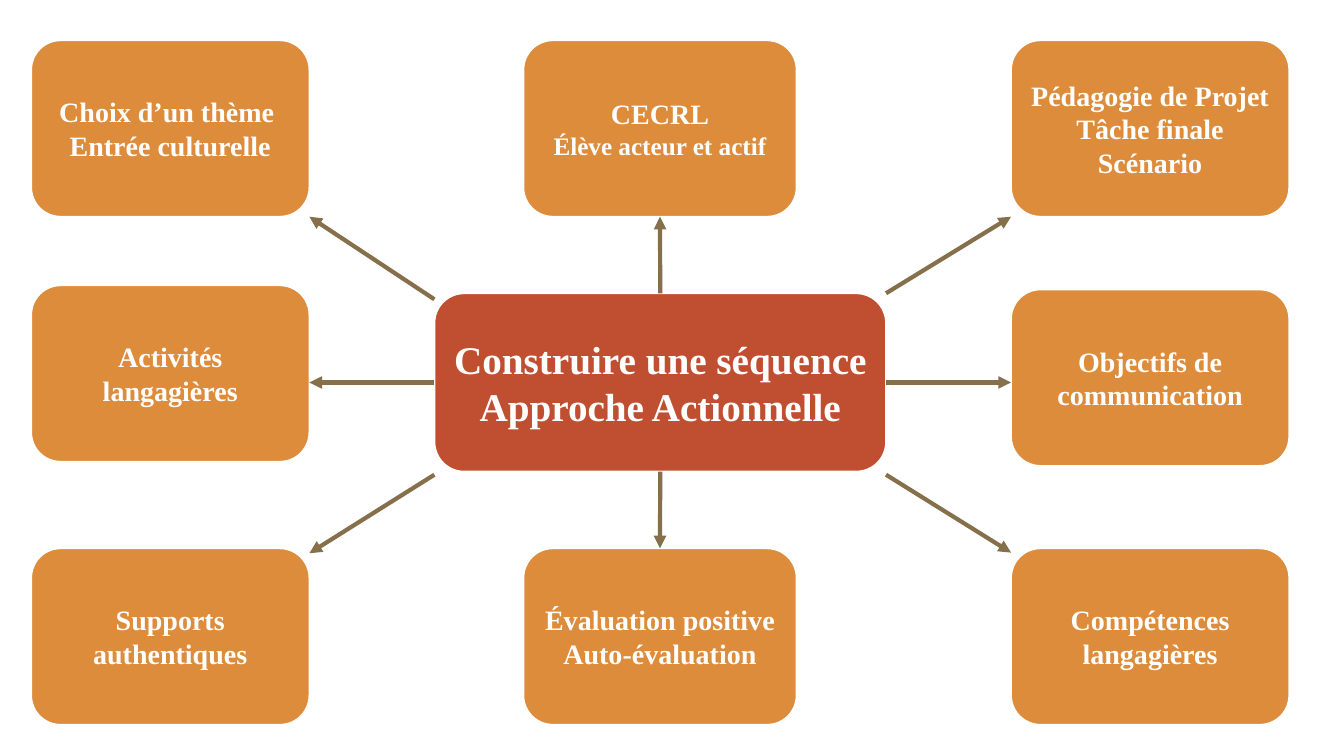
from pptx import Presentation
from pptx.dml.color import RGBColor
from pptx.enum.shapes import MSO_CONNECTOR as Connector, MSO_SHAPE as Shape
from pptx.enum.text import MSO_ANCHOR as Anchor, PP_ALIGN as Align
from pptx.oxml.ns import qn
from pptx.util import Pt
from lxml.etree import SubElement

COLORS = {"center": "C04F32", "topic": "DD8C3C", "arrow": "85704B", "white": "FFFFFF"}
FONT = "Times New Roman"
TOP, LEFT, BOTTOM, RIGHT = range(4)

CENTER_BOX = (310.3, 209.5, 322.6, 127.4)
CENTER_LINES = [("Construire une séquence", 28), ("Approche Actionnelle", 28)]

SIDE_WIDTH, MIDDLE_WIDTH, TOPIC_HEIGHT = 198.7, 195.1, 126
LEFT_X, MIDDLE_X, RIGHT_X = 22.3, 373.9, 722.2
TOP_Y, BOTTOM_Y = 28.8, 391.7

TOPICS = {
    "theme": (LEFT_X, TOP_Y, SIDE_WIDTH, [("Choix d’un thème ", 20), ("Entrée culturelle", 20)]),
    "activities": (LEFT_X, 203.8, SIDE_WIDTH, [("Activités langagières", 20)]),
    "supports": (LEFT_X, BOTTOM_Y, SIDE_WIDTH, [("Supports authentiques", 20)]),
    "framework": (MIDDLE_X, TOP_Y, MIDDLE_WIDTH, [("CECRL", 20), ("Élève acteur et actif", 18)]),
    "evaluation": (MIDDLE_X, BOTTOM_Y, MIDDLE_WIDTH,
                   [("Évaluation positive", 20), ("Auto-évaluation", 20)]),
    "project": (RIGHT_X, TOP_Y, SIDE_WIDTH, [("Pédagogie de Projet", 20), ("Tâche finale Scénario", 20)]),
    "objectives": (RIGHT_X, 206.8, SIDE_WIDTH, [("Objectifs de communication", 20)]),
    "skills": (RIGHT_X, BOTTOM_Y, SIDE_WIDTH, [("Compétences langagières", 20)]),
}


def rgb(name):
    """Return the named colour."""
    return RGBColor.from_string(COLORS[name])


def add_bubble(slide, box, lines, color):
    """Add a rounded box with centred bold lines of text."""
    bubble = slide.shapes.add_shape(Shape.ROUNDED_RECTANGLE, *map(Pt, box))
    bubble.shadow.inherit = False
    bubble.fill.solid()
    bubble.fill.fore_color.rgb = rgb(color)
    bubble.line.color.rgb = rgb("white")
    bubble.line.width = Pt(1.25)
    frame = bubble.text_frame
    frame.word_wrap = True
    frame.vertical_anchor = Anchor.MIDDLE
    for index, (text, size) in enumerate(lines):
        paragraph = frame.add_paragraph() if index else frame.paragraphs[0]
        paragraph.text = text
        paragraph.alignment = Align.CENTER
        font = paragraph.font
        font.name, font.size, font.bold = FONT, Pt(size), True
        font.color.rgb = rgb("white")
    return bubble


def add_arrow(slide, start, end):
    """Add an arrow between two points and return it."""
    arrow = slide.shapes.add_connector(Connector.STRAIGHT, *map(Pt, (*start, *end)))
    arrow.line.color.rgb = rgb("arrow")
    arrow.line.width = Pt(3)
    SubElement(arrow.line._get_or_add_ln(), qn("a:tailEnd"), type="triangle")
    SubElement(arrow._element.spPr, qn("a:effectLst"))
    return arrow


def add_arrows(slide, box, center, topics):
    """Draw the arrows that leave the central box."""
    left, top, width, height = box
    right, bottom = left + width, top + height
    middle_x, middle_y = left + width / 2, top + height / 2
    left_edge, right_edge = LEFT_X + SIDE_WIDTH, RIGHT_X
    upper_edge = TOP_Y + TOPIC_HEIGHT

    add_arrow(slide, (left, top + 4.3), (left_edge, upper_edge))
    add_arrow(slide, (right, top), (right_edge, upper_edge))
    add_arrow(slide, (left, bottom + 2.2), (left_edge, BOTTOM_Y + 3.5))
    add_arrow(slide, (right, bottom + 2.2), (right_edge, BOTTOM_Y + 3))

    for side, start_x, end_x in ((LEFT, left, left_edge), (RIGHT, right, right_edge)):
        arrow = add_arrow(slide, (start_x, middle_y), (end_x, middle_y))
        arrow.begin_connect(center, side)

    for side, facing, name, start_y, end_y in (
        (TOP, BOTTOM, "framework", top, upper_edge),
        (BOTTOM, TOP, "evaluation", bottom, BOTTOM_Y),
    ):
        arrow = add_arrow(slide, (middle_x, start_y), (middle_x, end_y))
        arrow.begin_connect(center, side)
        arrow.end_connect(topics[name], facing)


def add_mind_map(slide, box):
    """Place the central idea in the box, its topics and the arrows."""
    center = add_bubble(slide, box, CENTER_LINES, "center")
    topics = {
        name: add_bubble(slide, (left, top, width, TOPIC_HEIGHT), lines, "topic")
        for name, (left, top, width, lines) in TOPICS.items()
    }
    add_arrows(slide, box, center, topics)


def main():
    """Build and save the presentation."""
    presentation = Presentation()
    presentation.slide_width, presentation.slide_height = Pt(960), Pt(540)
    slide = presentation.slides.add_slide(presentation.slide_layouts[6])
    add_mind_map(slide, CENTER_BOX)
    presentation.save("out.pptx")


if __name__ == "__main__":
    main()
